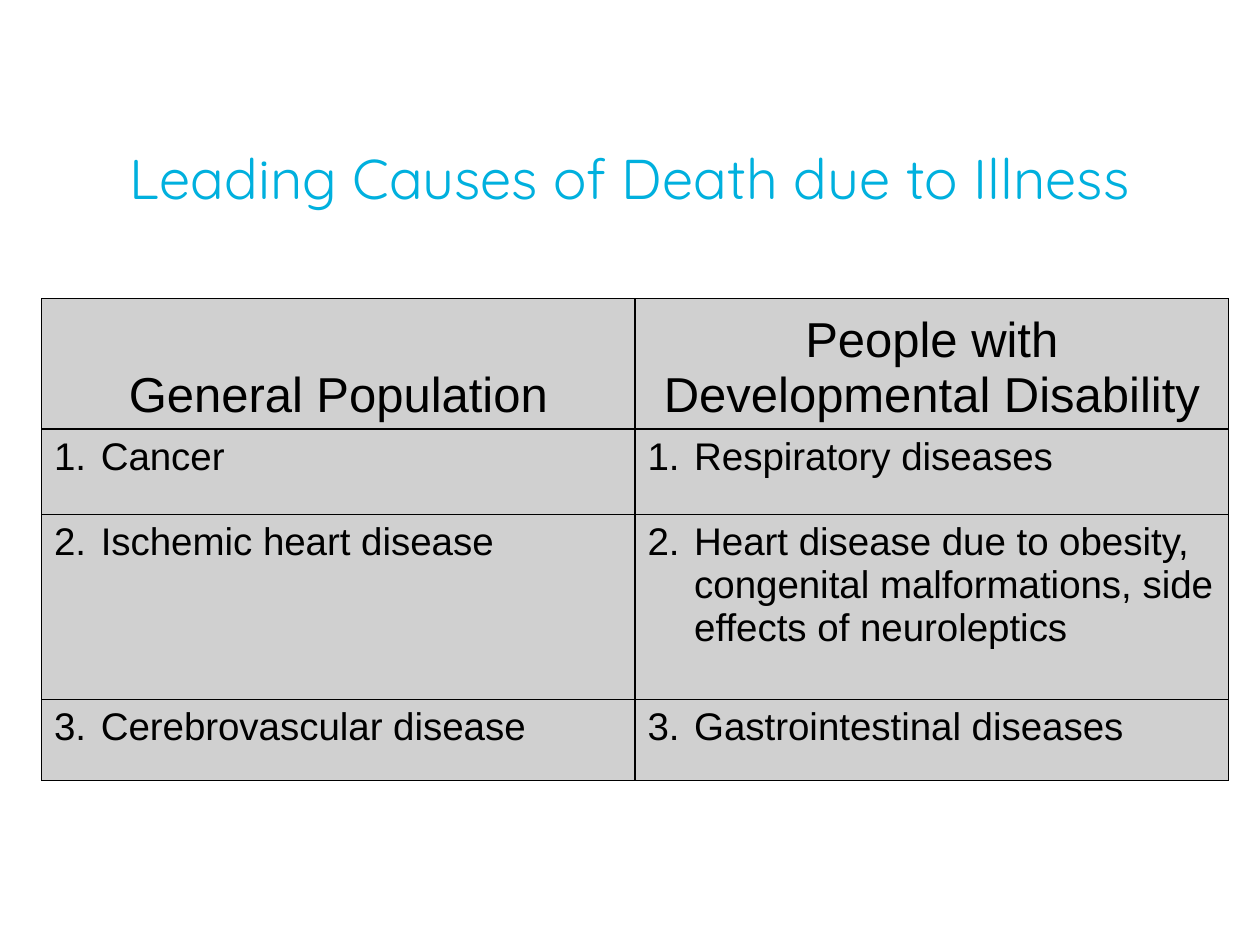
from dataclasses import dataclass

from lxml.etree import SubElement
from pptx import Presentation
from pptx.dml.color import RGBColor
from pptx.enum.text import MSO_ANCHOR, PP_ALIGN
from pptx.oxml.ns import qn
from pptx.util import Inches, Pt


@dataclass(frozen=True)
class Theme:
    title_color: RGBColor = RGBColor(0x00, 0xB0, 0xDE)
    text_color: RGBColor = RGBColor(0, 0, 0)
    cell_fill: RGBColor = RGBColor(0xD0, 0xD0, 0xD0)
    border: str = "000000"
    border_width: float = 0.75
    title_font: str = "Quicksand"
    body_font: str = "Arial"
    title_size: int = 32
    header_size: int = 28
    body_size: int = 22
    hanging: float = 0.37


class SlideBuilder:
    def __init__(self, slide, theme):
        self.slide = slide
        self.theme = theme

    def style(self, paragraph, font_name, size, color, align):
        paragraph.alignment = align
        font = paragraph.font
        font.name, font.size = font_name, Pt(size)
        font.color.rgb = color

    def title(self, text, left, top, width, height):
        box = self.slide.shapes.add_textbox(
            Inches(left), Inches(top), Inches(width), Inches(height))
        frame = box.text_frame
        frame.word_wrap = True
        frame.vertical_anchor = MSO_ANCHOR.BOTTOM
        frame.margin_left = frame.margin_right = frame.margin_bottom = 0
        frame.text = text
        self.style(frame.paragraphs[0], self.theme.title_font,
                   self.theme.title_size, self.theme.title_color, PP_ALIGN.CENTER)

    def table(self, headers, ranked_causes, left, top, width, row_heights):
        table = self.slide.shapes.add_table(
            len(row_heights), len(headers), Inches(left), Inches(top),
            Inches(width), Inches(sum(row_heights))).table
        for column in table.columns:
            column.width = Inches(width / len(headers))
        for row, height in zip(table.rows, row_heights):
            row.height = Inches(height)
        for column, header in enumerate(headers):
            self.header_cell(table.cell(0, column), header)
        for rank, causes in enumerate(ranked_causes, start=1):
            for column, cause in enumerate(causes):
                self.cause_cell(table.cell(rank, column), rank, cause)

    def header_cell(self, cell, text):
        cell.text = text
        cell.vertical_anchor = MSO_ANCHOR.BOTTOM
        self.style(cell.text_frame.paragraphs[0], self.theme.body_font,
                   self.theme.header_size, self.theme.text_color, PP_ALIGN.CENTER)
        self.frame_cell(cell)

    def cause_cell(self, cell, rank, cause):
        """Write a numbered cause with a hanging indent."""
        cell.text = f"{rank}.\t{cause}"
        paragraph = cell.text_frame.paragraphs[0]
        properties = paragraph._p.get_or_add_pPr()
        properties.set("marL", str(Inches(self.theme.hanging)))
        properties.set("indent", str(-Inches(self.theme.hanging)))
        self.style(paragraph, self.theme.body_font, self.theme.body_size,
                   self.theme.text_color, PP_ALIGN.LEFT)
        self.frame_cell(cell)

    def frame_cell(self, cell):
        """Draw the four borders, then the fill, in schema order."""
        properties = cell._tc.get_or_add_tcPr()
        for side in ("a:lnL", "a:lnR", "a:lnT", "a:lnB"):
            line = SubElement(properties, qn(side), w=str(Pt(self.theme.border_width)))
            fill = SubElement(line, qn("a:solidFill"))
            SubElement(fill, qn("a:srgbClr"), val=self.theme.border)
        cell.fill.solid()
        cell.fill.fore_color.rgb = self.theme.cell_fill


def main():
    presentation = Presentation()
    presentation.slide_width, presentation.slide_height = Inches(10), Inches(7.5)
    slide = presentation.slides.add_slide(presentation.slide_layouts[6])
    builder = SlideBuilder(slide, Theme())

    builder.title("Leading Causes of Death due to Illness", 0.5, 1, 9, 0.67)
    builder.table(
        headers=("General Population", "People with Developmental Disability"),
        ranked_causes=(
            ("Cancer", "Respiratory diseases"),
            ("Ischemic heart disease",
             "Heart disease due to obesity, congenital malformations, "
             "side effects of neuroleptics"),
            ("Cerebrovascular disease", "Gastrointestinal diseases"),
        ),
        left=0.33, top=2.37, width=9.42, row_heights=(0.97, 0.68, 1.47, 0.64))

    presentation.save("out.pptx")


if __name__ == "__main__":
    main()
